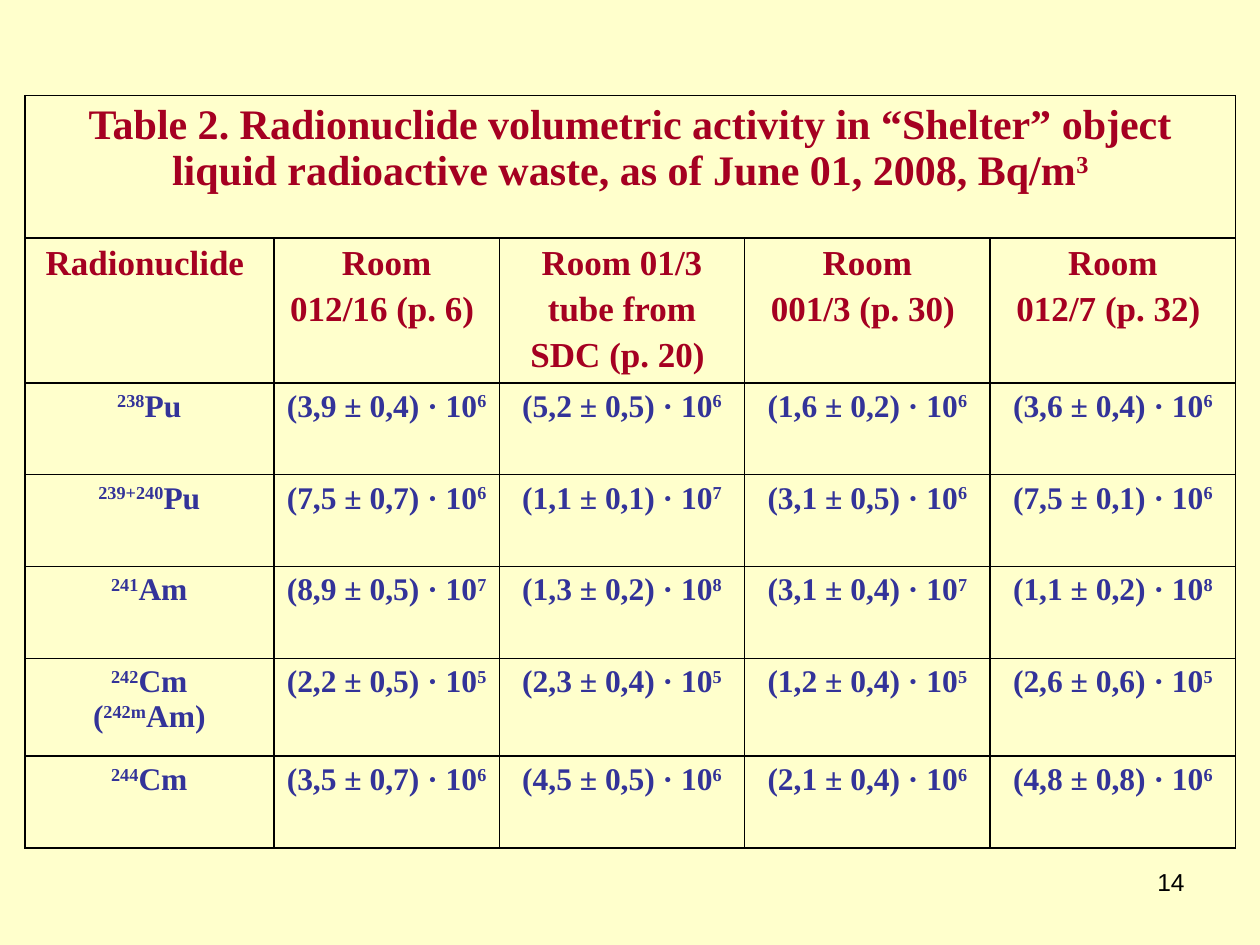
from pptx import Presentation
from pptx.dml.color import RGBColor
from pptx.enum.text import PP_ALIGN as Align
from pptx.oxml import parse_xml
from pptx.oxml.ns import nsdecls
from pptx.util import Cm, Pt

CREAM = RGBColor(0xFF, 0xFF, 0xCC)
RED = RGBColor(0xA5, 0x00, 0x21)
BLUE = RGBColor(0x33, 0x33, 0x99)
BLACK = RGBColor(0x00, 0x00, 0x00)

TITLE = ("Table 2. Radionuclide volumetric activity in “Shelter” object "
         "liquid radioactive waste, as of June 01, 2008, Bq/m^3^")
HEADS = ["Radionuclide ", "Room\n012/16 (p. 6) ",
         "Room 01/3\ntube from\nSDC (p. 20) ",
         "Room\n001/3 (p. 30) ", "Room\n012/7 (p. 32) "]
# Nuclide, then (value, error, power of ten) for each room
DATA = [
    ("^238^Pu", "3,9 0,4 6", "5,2 0,5 6", "1,6 0,2 6", "3,6 0,4 6"),
    ("^239+240^Pu", "7,5 0,7 6", "1,1 0,1 7", "3,1 0,5 6", "7,5 0,1 6"),
    ("^241^Am", "8,9 0,5 7", "1,3 0,2 8", "3,1 0,4 7", "1,1 0,2 8"),
    ("^242^Cm\n(^242m^Am)", "2,2 0,5 5", "2,3 0,4 5", "1,2 0,4 5", "2,6 0,6 5"),
    ("^244^Cm", "3,5 0,7 6", "4,5 0,5 6", "2,1 0,4 6", "4,8 0,8 6"),
]


def write(cell, text, size, color, gap=0):
    """Fill a cell; text between carets is superscript."""
    for i, line in enumerate(text.split("\n")):
        frame = cell.text_frame
        para = frame.add_paragraph() if i else frame.paragraphs[0]
        para.alignment = Align.CENTER
        if i and gap:
            para.space_before = Pt(gap)
        for j, part in enumerate(line.split("^")):
            if not part:
                continue
            run = para.add_run()
            run.text = part
            font = run.font
            font.name, font.size, font.bold = "Times New Roman", Pt(size), True
            font.color.rgb = color
            if j % 2:
                run._r.get_or_add_rPr().set("baseline", "30000")


def frame_cell(cell):
    """Clear the fill and draw thin black borders."""
    cell.fill.background()
    props = cell._tc.get_or_add_tcPr()
    for i, side in enumerate(("lnL", "lnR", "lnT", "lnB")):
        props.insert(i, parse_xml(
            f'<a:{side} {nsdecls("a")} w="{Pt(1)}"><a:solidFill>'
            f'<a:srgbClr val="{BLACK}"/></a:solidFill></a:{side}>'))


# Slide
prs = Presentation()
prs.slide_width, prs.slide_height = Cm(25.4), Cm(19.05)
slide = prs.slides.add_slide(prs.slide_layouts[6])
slide.background.fill.solid()
slide.background.fill.fore_color.rgb = CREAM

# Table grid
widths = [5.02, 4.55, 4.94, 4.95, 4.95]
heights = [2.87, 2.92, 1.85, 1.85, 1.85, 1.97, 1.85]
table = slide.shapes.add_table(len(heights), len(widths), Cm(0.5), Cm(1.93),
                               Cm(sum(widths)), Cm(sum(heights))).table
table.first_row = table.horz_banding = False
for col, width in zip(table.columns, widths):
    col.width = Cm(width)
for row, height in zip(table.rows, heights):
    row.height = Cm(height)
for cell in table.iter_cells():
    frame_cell(cell)

# Title and column heads
table.cell(0, 0).merge(table.cell(0, len(widths) - 1))
write(table.cell(0, 0), TITLE, 24, RED)
for c, head in enumerate(HEADS):
    write(table.cell(1, c), head, 20, RED, gap=4)

# Activity values
for r, (name, *rooms) in enumerate(DATA, 2):
    write(table.cell(r, 0), name, 18, BLUE)
    for c, room in enumerate(rooms, 1):
        mean, error, power = room.split()
        cell = table.cell(r, c)
        cell.margin_left = cell.margin_right = Cm(0.2)
        write(cell, f"({mean} ± {error}) · 10^{power}^", 18, BLUE)

# Slide number
box = slide.shapes.add_textbox(Cm(18.21), Cm(17.35), Cm(5.92), Cm(1.32))
box.text_frame.word_wrap = True
para = box.text_frame.paragraphs[0]
para.text = "14"
para.alignment = Align.RIGHT
font = para.runs[0].font
font.name, font.size = "Arial", Pt(14)
font.color.rgb = BLACK

prs.save("out.pptx")
